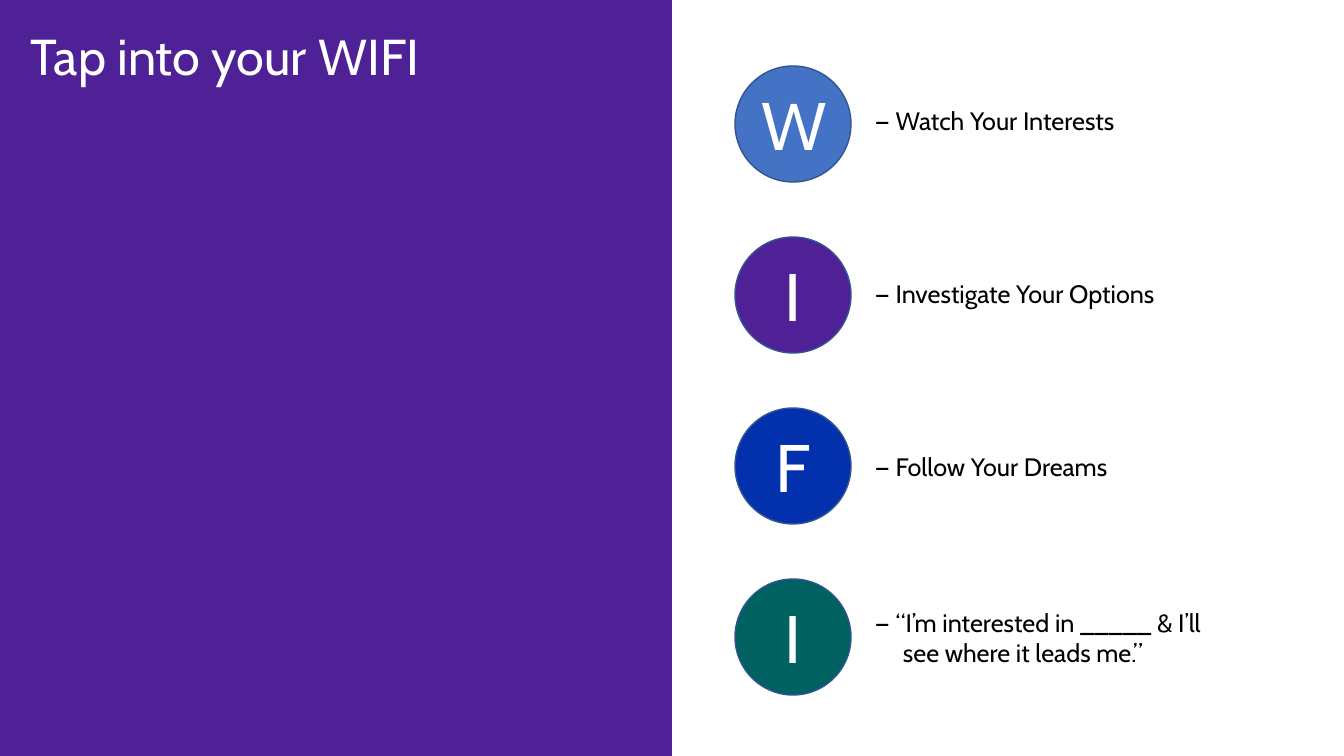
"""Build a slide that spells out WIFI with four lettered discs."""
from pptx import Presentation
from pptx.dml.color import RGBColor
from pptx.enum.shapes import MSO_SHAPE
from pptx.enum.text import MSO_ANCHOR, MSO_AUTO_SIZE, PP_ALIGN
from pptx.util import Pt

SCALE = 914400 / 100.8
FONT = "Cabin"
WHITE = RGBColor(0xFF, 0xFF, 0xFF)
BLACK = RGBColor(0x00, 0x00, 0x00)
PURPLE = RGBColor(0x4F, 0x21, 0x96)
VIOLET = RGBColor(0x50, 0x21, 0x96)
SKY = RGBColor(0x44, 0x72, 0xC4)
BLUE = RGBColor(0x03, 0x30, 0xAD)
TEAL = RGBColor(0x00, 0x61, 0x61)
EDGE = RGBColor(0x32, 0x54, 0x91)

DISCS = [("W", SKY), ("I", VIOLET), ("F", BLUE), ("I", TEAL)]
STEPS = [
    "— Watch Your Interests",
    "— Investigate Your Options",
    "— Follow Your Dreams",
    "— “I’m interested in _____ & I’ll see where it leads me.”",
]


def px(count):
    """Turn pixels into EMU."""
    return round(count * SCALE)


def add_run(para, text, size, color):
    """Add one run of styled text."""
    run = para.add_run()
    run.text = text
    run.font.name = FONT
    run.font.size = Pt(size)
    run.font.color.rgb = color


def add_panel(slide):
    """Fill the left half, behind the title."""
    panel = slide.shapes.add_shape(MSO_SHAPE.RECTANGLE, 0, 0, px(672), px(756))
    panel.shadow.inherit = False
    panel.fill.solid()
    panel.fill.fore_color.rgb = PURPLE
    panel.line.fill.background()
    slide.shapes.title.element.addprevious(panel.element)


def add_title(slide, text):
    """Place and style the title."""
    title = slide.shapes.title
    title.left, title.top = px(20), px(20)
    title.width, title.height = px(567), px(72)
    frame = title.text_frame
    frame.auto_size = MSO_AUTO_SIZE.NONE
    frame.vertical_anchor = MSO_ANCHOR.TOP
    para = frame.paragraphs[0]
    para.alignment = PP_ALIGN.LEFT
    add_run(para, text, 36, WHITE)


def add_steps(slide):
    """List the four steps in one text box."""
    box = slide.shapes.add_textbox(px(865), px(100), px(370), px(579))
    frame = box.text_frame
    frame.word_wrap = True
    for rank, step in enumerate(STEPS):
        para = frame.add_paragraph() if rank else frame.paragraphs[0]
        para.space_before = Pt(102)
        add_run(para, step, 18, BLACK)
    para.space_before = Pt(90)
    props = para._p.get_or_add_pPr()
    props.set("marL", str(px(28)))
    props.set("indent", str(-px(28)))


def add_disc(slide, top, letter, color):
    """Draw a disc with a letter in it."""
    disc = slide.shapes.add_shape(
        MSO_SHAPE.OVAL, px(735), px(top), px(116), px(116))
    disc.shadow.inherit = False
    disc.fill.solid()
    disc.fill.fore_color.rgb = color
    disc.line.color.rgb = EDGE
    disc.line.width = Pt(1)
    frame = disc.text_frame
    frame.vertical_anchor = MSO_ANCHOR.MIDDLE
    para = frame.paragraphs[0]
    para.alignment = PP_ALIGN.CENTER
    add_run(para, letter, 48, WHITE)


def main():
    """Build and save the slide."""
    deck = Presentation()
    deck.slide_width, deck.slide_height = px(1344), px(756)
    slide = deck.slides.add_slide(deck.slide_layouts[5])
    add_panel(slide)
    add_title(slide, "Tap into your WIFI")
    add_steps(slide)
    for rank, (letter, color) in enumerate(DISCS):
        add_disc(slide, 66 + 171 * rank, letter, color)
    deck.save("out.pptx")


if __name__ == "__main__":
    main()
